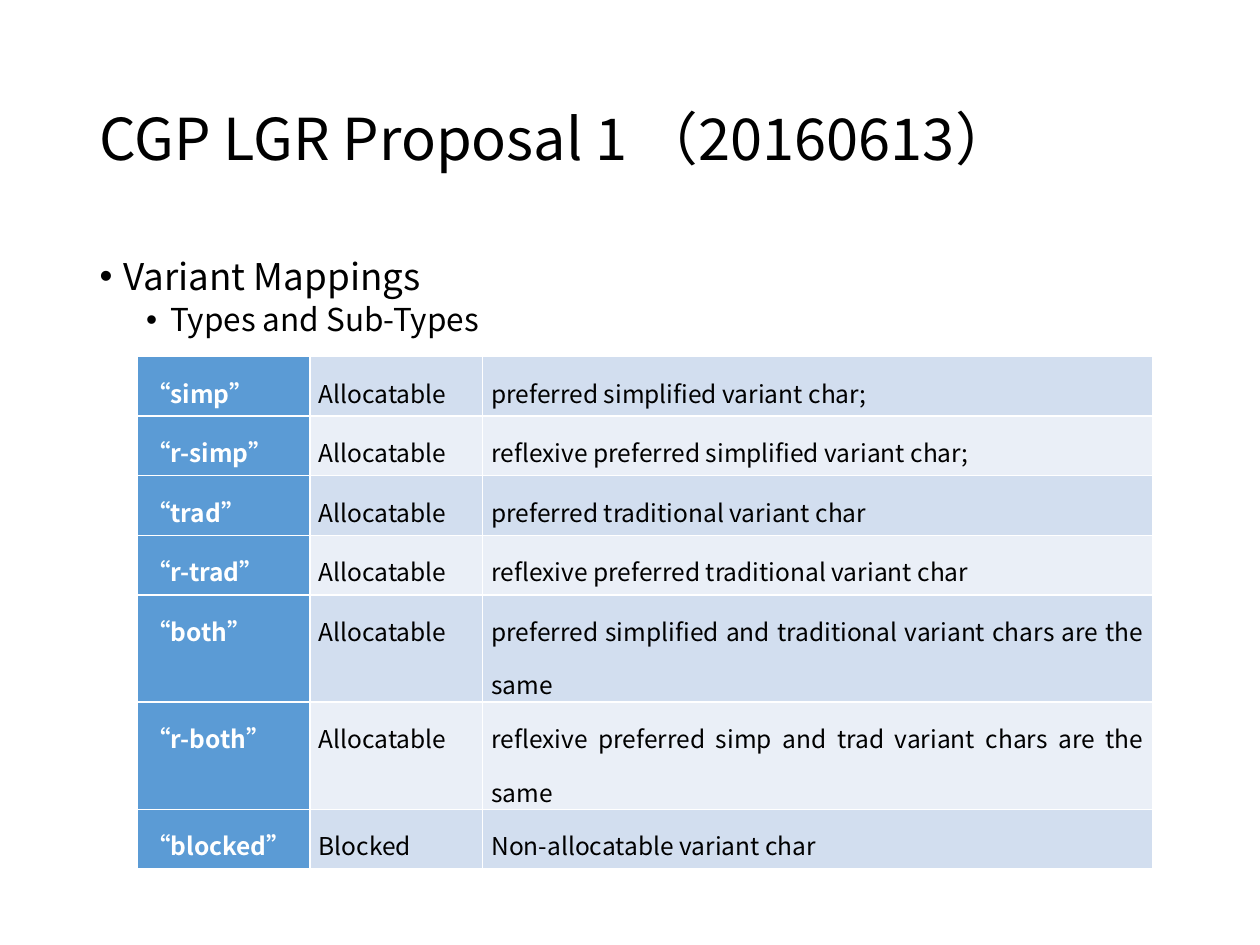
from pptx import Presentation
from pptx import util as u
from pptx.dml.color import RGBColor
from pptx.enum import text
from pptx.oxml import parse_xml
from pptx.oxml.ns import nsdecls

FONT = "Noto Sans CJK SC"
BLACK, WHITE = "000000", "FFFFFF"
HEADER, BANDS = "5B9BD5", ("D2DEEF", "EAEFF7")

VARIANT_TYPES = [
    ("“simp”", "Allocatable", "preferred simplified variant char;"),
    ("“r-simp”", "Allocatable", "reflexive preferred simplified variant char;"),
    ("“trad”", "Allocatable", "preferred traditional variant char"),
    ("“r-trad”", "Allocatable", "reflexive preferred traditional variant char"),
    ("“both”", "Allocatable",
     "preferred simplified and traditional variant chars are the same"),
    ("“r-both”", "Allocatable",
     "reflexive preferred simp and trad variant chars are the same"),
    ("“blocked”", "Blocked", "Non-allocatable variant char "),
]


def color(hex_value):
    return RGBColor.from_string(hex_value)


def format_runs(paragraph, size, hex_value=BLACK, bold=False):
    for run in paragraph.runs:
        run.font.size = u.Pt(size)
        run.font.name = FONT
        run.font.bold = bold
        run.font.color.rgb = color(hex_value)
        run.font._element.append(
            parse_xml(f'<a:ea {nsdecls("a")} typeface="{FONT}"/>'))


def place(shape, left, top, width, height):
    shape.left, shape.top = u.Inches(left), u.Inches(top)
    shape.width, shape.height = u.Inches(width), u.Inches(height)


def add_title(slide, box):
    title = slide.shapes.title
    place(title, *box)
    title.text_frame.text = "CGP LGR Proposal 1 （20160613）"
    title.text_frame.vertical_anchor = text.MSO_ANCHOR.MIDDLE
    heading = title.text_frame.paragraphs[0]
    heading.alignment = text.PP_ALIGN.LEFT
    heading.line_spacing = 0.9
    format_runs(heading, 33)


def add_bullets(slide, box):
    body = slide.placeholders[1]
    place(body, *box)
    frame = body.text_frame
    frame.text = "Variant Mappings\nTypes and Sub-Types"
    styles = [(21, 7.5, 0.19), (18, 3.8, 0.56)]
    for level, (bullet, style) in enumerate(zip(frame.paragraphs, styles)):
        size, space_before, indent = style
        bullet.level = level
        bullet.line_spacing = 0.9
        bullet.space_before = u.Pt(space_before)
        format_runs(bullet, size)
        properties = bullet._p.get_or_add_pPr()
        properties.set("marL", str(u.Inches(indent)))
        properties.set("indent", str(u.Inches(-0.19)))
        properties.append(parse_xml(
            f'<a:buFont {nsdecls("a")} typeface="Arial"/>'))
        properties.append(parse_xml(f'<a:buChar {nsdecls("a")} char="•"/>'))


def add_borders(cell):
    properties = cell._tc.get_or_add_tcPr()
    for position, side in enumerate(("lnL", "lnR", "lnT", "lnB")):
        properties.insert(position, parse_xml(
            f'<a:{side} {nsdecls("a")} w="{u.Pt(1)}"><a:solidFill>'
            f'<a:srgbClr val="{WHITE}"/></a:solidFill></a:{side}>'))


def fill_cell(cell, content, fill, font_color, bold):
    cell.fill.solid()
    cell.fill.fore_color.rgb = color(fill)
    cell.margin_left = cell.margin_right = u.Inches(0.07)
    cell.margin_top = cell.margin_bottom = 0
    cell.text_frame.text = content
    paragraph = cell.text_frame.paragraphs[0]
    paragraph.alignment = text.PP_ALIGN.JUSTIFY
    paragraph.line_spacing = 1.5
    format_runs(paragraph, 14, font_color, bold)
    add_borders(cell)


def add_variant_table(slide, box):
    widths = (1.37, 1.37, 5.32)
    table = slide.shapes.add_table(
        len(VARIANT_TYPES), len(widths), *map(u.Inches, box)).table
    table.first_row = False
    table.first_col = True
    for column, width in zip(table.columns, widths):
        column.width = u.Inches(width)
    for r, row in enumerate(VARIANT_TYPES):
        for c, content in enumerate(row):
            is_type = c == 0
            fill_cell(table.cell(r, c), content,
                      HEADER if is_type else BANDS[r % 2],
                      WHITE if is_type else BLACK, is_type)


def main():
    deck = Presentation()
    deck.slide_width, deck.slide_height = u.Inches(10), u.Inches(7.5)
    slide = deck.slides.add_slide(deck.slide_layouts[1])
    add_title(slide, (0.69, 0.4, 8.62, 1.45))
    add_bullets(slide, (0.69, 2, 8.62, 4.76))
    add_variant_table(slide, (1.09, 2.83, 8.07, 3.31))
    deck.save("out.pptx")


if __name__ == "__main__":
    main()
